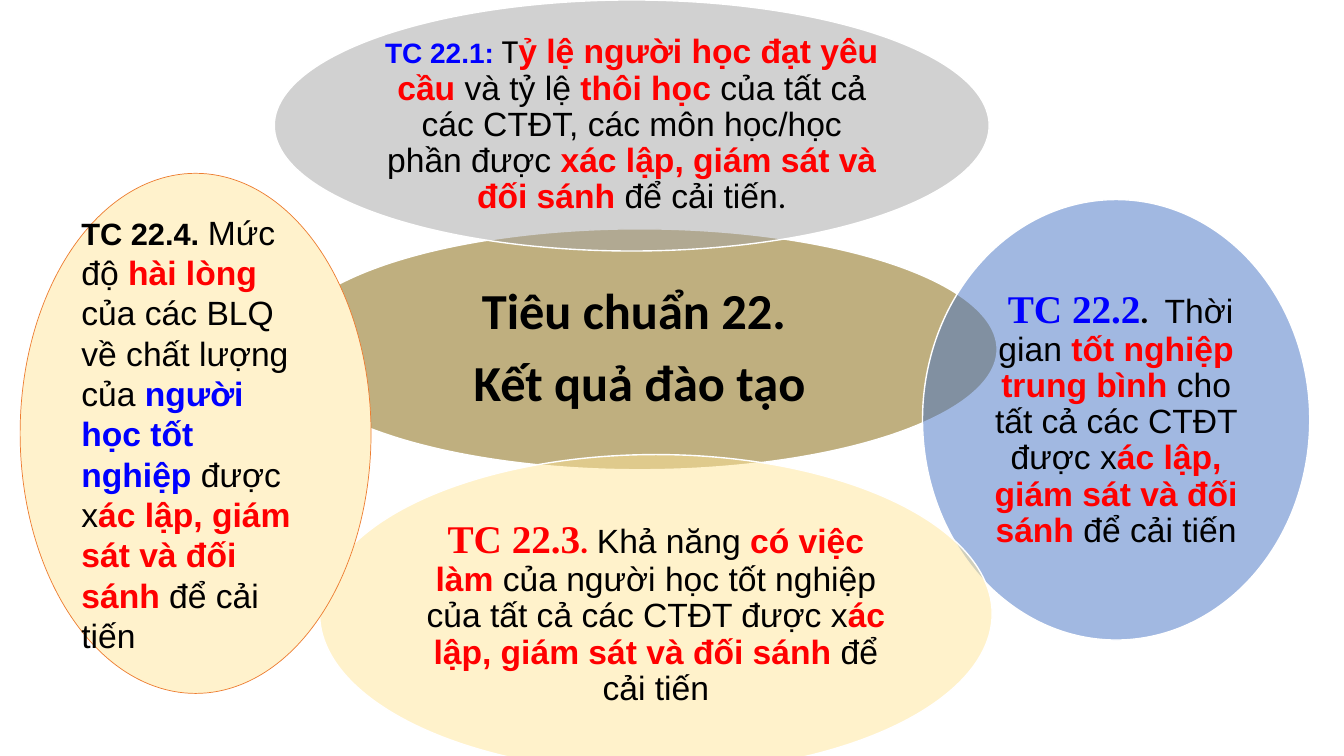
"""Build the slide on standard 22: one central ellipse with four criteria around it."""
import math

from lxml import etree
from pptx import Presentation
from pptx import util as u
from pptx.dml.color import RGBColor
from pptx.enum import shapes, text
from pptx.oxml.ns import qn

BLACK = RGBColor(0, 0, 0)
RED = RGBColor(0xFF, 0, 0)
BLUE = RGBColor(0, 0, 0xFF)
WHITE = RGBColor(0xFF, 0xFF, 0xFF)
OLIVE = RGBColor(0x80, 0x60, 0)
GRAY = RGBColor(0xA5, 0xA5, 0xA5)
STEEL = RGBColor(0x44, 0x72, 0xC4)
YELLOW = RGBColor(0xFF, 0xE6, 0x99)
CREAM = RGBColor(0xFF, 0xF2, 0xCC)
ORANGE = RGBColor(0xED, 0x7D, 0x31)

SLIDE_WIDTH, SLIDE_HEIGHT = u.Inches(13.33), u.Inches(7.5)
INSCRIBED_SHARE = math.sqrt(0.5)

STYLES = {
    "heading": ("Calibri", 36, BLACK, True, False),
    "plain": ("Arial", 24, BLACK, False, False),
    "key": ("Arial", 24, RED, True, False),
    "group": ("Arial", 24, BLUE, True, False),
    "light": ("Calibri", 24, BLACK, False, False),
    "code 1": ("Arial", 20, BLUE, True, False),
    "code 2": ("Times New Roman", 28, BLUE, True, False),
    "dot 2": ("Calibri", 24, BLACK, True, True),
    "code 3": ("Times New Roman", 28, RED, True, False),
    "dot 3": ("Calibri", 24, RED, True, True),
    "code 4": ("Arial", 22, BLACK, True, False),
}

HEADING = [
    [("Tiêu chuẩn 22. ", "heading")],
    [("Kết quả đào tạo", "heading")],
]
CRITERION_1 = [[
    ("TC 22.1: ", "code 1"), ("T", "light"),
    ("ỷ lệ người học đạt yêu cầu ", "key"), ("và tỷ lệ ", "plain"),
    ("thôi học ", "key"),
    ("của tất cả các CTĐT, các môn học/học phần được ", "plain"),
    ("xác lập, giám sát và đối sánh", "key"),
    (" để cải tiến", "plain"), (".", "light"),
]]
CRITERION_2 = [[
    (" TC 22.2", "code 2"), (".  ", "dot 2"), ("Thời gian ", "plain"),
    ("tốt nghiệp trung bình ", "key"),
    ("cho tất cả các CTĐT được x", "plain"),
    ("ác lập, giám sát và đối sánh ", "key"), ("để cải tiến", "plain"),
]]
CRITERION_3 = [[
    ("TC 22.3", "code 3"), (". ", "dot 3"), ("Khả năng ", "plain"),
    ("có việc làm ", "key"),
    ("của người học tốt nghiệp của tất cả các CTĐT được x", "plain"),
    ("ác lập, giám sát và đối sánh", "key"), (" để cải tiến", "plain"),
]]
CRITERION_4 = [[
    ("TC 22.4. ", "code 4"), ("Mức độ ", "plain"), ("hài lòng ", "key"),
    ("của các BLQ về chất lượng của ", "plain"),
    ("người học tốt nghiệp ", "group"), ("được x", "plain"),
    ("ác lập, giám sát và đối sánh ", "key"), ("để cải tiến", "plain"),
]]

CENTER_BOX = (21, 30.27, 53.19, 31.87)
CENTERED = {"alignment": text.PP_ALIGN.CENTER, "line_spacing": 0.9}
SPACED = {**CENTERED, "space_after": u.Pt(12.6)}
LEFT = {"alignment": text.PP_ALIGN.LEFT}

CRITERIA = [
    ((20.41, 0, 53.19, 33.2), GRAY, 50, WHITE, 1, CRITERION_1, CENTERED, (0.03, 0.03)),
    ((68.64, 26.4, 28.81, 58.27), STEEL, 50, WHITE, 1, CRITERION_2, CENTERED, (0.04, 0.04)),
    ((23.78, 60.13, 50.04, 42.13), YELLOW, 50, WHITE, 1, CRITERION_3, CENTERED, (0.04, 0.04)),
    ((1.5, 22.93, 26.11, 68.8), CREAM, 100, ORANGE, 0.5, CRITERION_4, LEFT, (0.1, 0.05)),
]


def to_lengths(percents):
    """Turn percentages of the slide into left, top, width and height."""
    sides = (SLIDE_WIDTH, SLIDE_HEIGHT) * 2
    return [u.Emu(round(side * percent / 100)) for side, percent in zip(sides, percents)]


def add_ellipse(slide, box, color, opacity, line_color, line_width):
    """Add one ellipse with a flat, possibly see-through fill."""
    ellipse = slide.shapes.add_shape(shapes.MSO_SHAPE.OVAL, *to_lengths(box))
    ellipse.shadow.inherit = False
    ellipse.fill.solid()
    ellipse.fill.fore_color.rgb = color
    ellipse.line.color.rgb = line_color
    ellipse.line.width = u.Pt(line_width)
    if opacity < 100:
        fill_color = ellipse._element.spPr.find(qn("a:solidFill"))[0]
        etree.SubElement(fill_color, qn("a:alpha"), val=str(opacity * 1000))
    return ellipse


def write_text(shape, paragraphs, paragraph_format, insets):
    """Write styled runs into a shape."""
    frame = shape.text_frame
    across, down = (u.Inches(inset) for inset in insets)
    frame_format = {
        "word_wrap": True, "auto_size": text.MSO_AUTO_SIZE.NONE,
        "vertical_anchor": text.MSO_ANCHOR.MIDDLE,
        "margin_left": across, "margin_right": across,
        "margin_top": down, "margin_bottom": down,
    }
    for name, value in frame_format.items():
        setattr(frame, name, value)
    for index, runs in enumerate(paragraphs):
        paragraph = frame.add_paragraph() if index else frame.paragraphs[0]
        for name, value in paragraph_format.items():
            setattr(paragraph, name, value)
        for words, style in runs:
            run = paragraph.add_run()
            run.text = words
            font_name, size, color, bold, italic = STYLES[style]
            run_format = {"name": font_name, "size": u.Pt(size), "bold": bold, "italic": italic}
            for name, value in run_format.items():
                setattr(run.font, name, value)
            run.font.color.rgb = color


def add_heading(slide):
    """Add the central ellipse and set the title inside it."""
    ellipse = add_ellipse(slide, CENTER_BOX, OLIVE, 50, WHITE, 1)
    title = slide.shapes.title
    title.width = round(ellipse.width * INSCRIBED_SHARE)
    title.height = round(ellipse.height * INSCRIBED_SHARE)
    title.left = ellipse.left + (ellipse.width - title.width) // 2
    title.top = ellipse.top + (ellipse.height - title.height) // 2
    ellipse._element.addnext(title._element)
    write_text(title, HEADING, SPACED, (0.05, 0.05))


def main():
    """Build and save the presentation."""
    presentation = Presentation()
    presentation.slide_width, presentation.slide_height = SLIDE_WIDTH, SLIDE_HEIGHT
    slide = presentation.slides.add_slide(presentation.slide_layouts.get_by_name("Title Only"))
    add_heading(slide)
    for box, color, opacity, line_color, line_width, paragraphs, layout, insets in CRITERIA:
        ellipse = add_ellipse(slide, box, color, opacity, line_color, line_width)
        write_text(ellipse, paragraphs, layout, insets)
    presentation.save("out.pptx")


if __name__ == "__main__":
    main()
